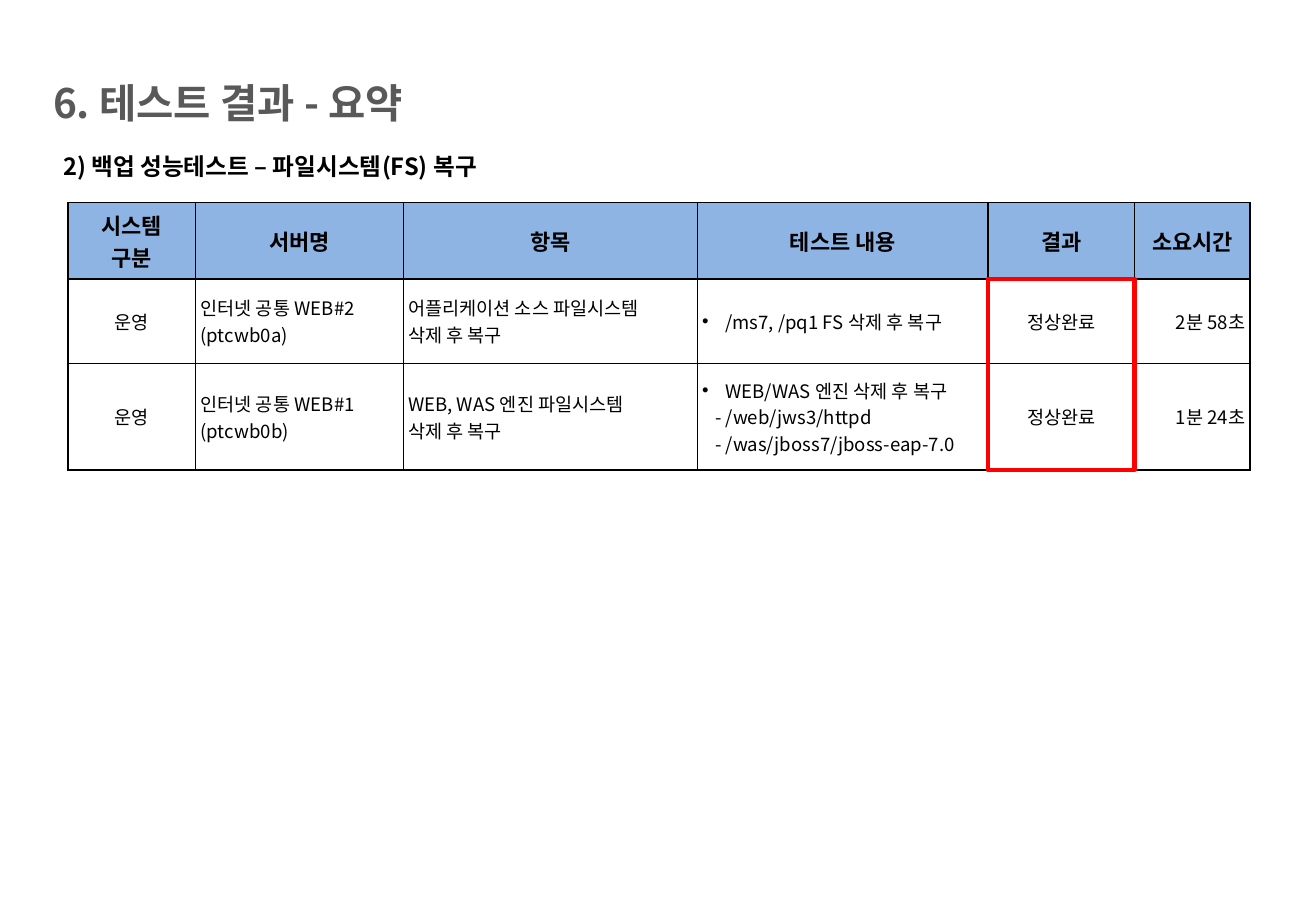
from lxml import etree
from pptx import Presentation
from pptx.dml.color import RGBColor
from pptx.enum.shapes import MSO_SHAPE
from pptx.enum.text import MSO_ANCHOR, PP_ALIGN
from pptx.oxml.ns import qn
from pptx.util import Cm, Pt

LEFT, CENTER, RIGHT = PP_ALIGN.LEFT, PP_ALIGN.CENTER, PP_ALIGN.RIGHT
MIDDLE, BOTTOM = MSO_ANCHOR.MIDDLE, MSO_ANCHOR.BOTTOM
RECTANGLE = MSO_SHAPE.RECTANGLE

FONT = "Noto Sans CJK KR"
COLORS = {
    "title": "595959",
    "text": "000000",
    "header": "8EB4E3",
    "cell": "FFFFFF",
    "border": "000000",
    "highlight": "FF0000",
}

COLUMN_WIDTHS = [2.67, 4.34, 6.15, 6.07, 3.07, 2.41]
ROW_HEIGHTS = [1.59, 1.77, 2.23]
ALIGNMENTS = [CENTER, LEFT, LEFT, LEFT, CENTER, RIGHT]
RESULT_COLUMN = 4
HEADERS = ["시스템\n구분", "서버명", "항목", "테스트 내용", "결과", "소요시간"]
TEST_ROWS = [
    ["운영", "인터넷 공통 WEB#2\n(ptcwb0a)",
     "어플리케이션 소스 파일시스템\n삭제 후 복구",
     "• /ms7, /pq1 FS 삭제 후 복구", "정상완료", "2분 58초"],
    ["운영", "인터넷 공통 WEB#1\n(ptcwb0b)",
     "WEB, WAS 엔진 파일시스템\n삭제 후 복구",
     "• WEB/WAS 엔진 삭제 후 복구\n- /web/jws3/httpd\n- /was/jboss7/jboss-eap-7.0",
     "정상완료", "1분 24초"],
]


def color(name):
    return RGBColor.from_string(COLORS[name])


def style_paragraph(para, size, bold=False, color_name="text", align=LEFT):
    para.alignment = align
    para.font.size = Pt(size)
    para.font.bold = bold
    para.font.color.rgb = color(color_name)
    para.font.name = FONT
    etree.SubElement(para._p.pPr.defRPr, qn("a:ea"), typeface=FONT)


def write_line(para, line):
    """Turn a leading bullet mark into a real bullet and indent dash lines."""
    properties = para._p.get_or_add_pPr()
    if line.startswith("• "):
        line = line[2:]
        properties.set("marL", str(Cm(0.48)))
        properties.set("indent", str(Cm(-0.48)))
        etree.SubElement(properties, qn("a:buFont"), typeface="Arial")
        etree.SubElement(properties, qn("a:buChar"), char="•")
    elif line.startswith("- "):
        properties.set("marL", str(Cm(0.27)))
    para.text = line


def add_heading(page, box, text, size, color_name, anchor, spacing=1.0):
    frame = page.shapes.add_textbox(*(Cm(length) for length in box)).text_frame
    frame.word_wrap = True
    frame.vertical_anchor = anchor
    para = frame.paragraphs[0]
    para.text = text
    para.line_spacing = spacing
    style_paragraph(para, size, True, color_name)


def add_borders(cell):
    properties = cell._tc.get_or_add_tcPr()
    for index, side in enumerate(("lnL", "lnR", "lnT", "lnB")):
        line = etree.Element(qn(f"a:{side}"), w=str(Pt(1)))
        fill = etree.SubElement(line, qn("a:solidFill"))
        etree.SubElement(fill, qn("a:srgbClr"), val=COLORS["border"])
        properties.insert(index, line)


def fill_cell(cell, text, align, is_header):
    cell.margin_left = cell.margin_right = Cm(0.1)
    cell.margin_top = cell.margin_bottom = Cm(0.1)
    cell.vertical_anchor = MIDDLE
    cell.fill.solid()
    cell.fill.fore_color.rgb = color("header" if is_header else "cell")
    add_borders(cell)
    frame = cell.text_frame
    for index, line in enumerate(text.split("\n")):
        para = frame.add_paragraph() if index else frame.paragraphs[0]
        write_line(para, line)
        style_paragraph(para, 13 if is_header else 11, is_header, align=align)


def add_result_table(page, left, top):
    rows = [HEADERS] + TEST_ROWS
    table = page.shapes.add_table(
        len(rows), len(HEADERS), Cm(left), Cm(top),
        Cm(sum(COLUMN_WIDTHS)), Cm(sum(ROW_HEIGHTS))).table
    for column, width in zip(table.columns, COLUMN_WIDTHS):
        column.width = Cm(width)
    for row, height in zip(table.rows, ROW_HEIGHTS):
        row.height = Cm(height)
    for row_index, texts in enumerate(rows):
        is_header = row_index == 0
        for column_index, text in enumerate(texts):
            align = CENTER if is_header else ALIGNMENTS[column_index]
            fill_cell(table.cell(row_index, column_index), text, align, is_header)


def add_result_highlight(page, left, top):
    """Frame the result column below the header of the table at left, top."""
    frame = page.shapes.add_shape(
        RECTANGLE,
        Cm(left + sum(COLUMN_WIDTHS[:RESULT_COLUMN])), Cm(top + ROW_HEIGHTS[0]),
        Cm(COLUMN_WIDTHS[RESULT_COLUMN]), Cm(sum(ROW_HEIGHTS[1:])))
    frame.shadow.inherit = False
    frame.fill.background()
    frame.line.color.rgb = color("highlight")
    frame.line.width = Pt(2.5)


def main():
    deck = Presentation()
    deck.slide_width, deck.slide_height = Cm(27.51), Cm(19.05)
    page = deck.slides.add_slide(deck.slide_layouts[6])
    add_heading(page, (0.86, 0.71, 20.47, 2.06), "6. 테스트 결과 - 요약",
                24, "title", BOTTOM)
    add_heading(page, (1.07, 2.75, 25.07, 1.14),
                "2) 백업 성능테스트 – 파일시스템(FS) 복구", 14, "text", MIDDLE, 1.5)
    table_left, table_top = 1.42, 4.24
    add_result_table(page, table_left, table_top)
    add_result_highlight(page, table_left, table_top)
    deck.save("out.pptx")


if __name__ == "__main__":
    main()
